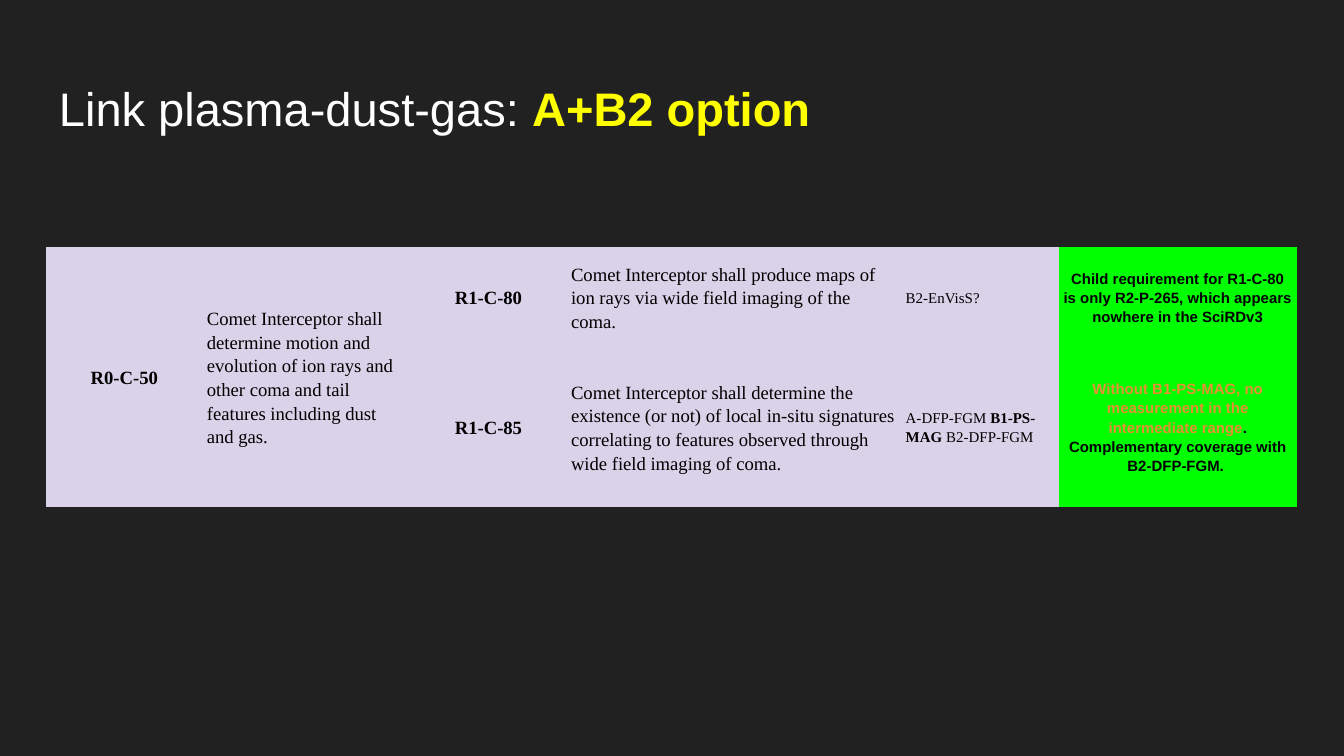
"""Build the slide on the plasma-dust-gas link for the A+B2 option."""
from pptx import Presentation
from pptx.dml.color import RGBColor
from pptx.enum.text import MSO_ANCHOR, PP_ALIGN
from pptx.util import Inches, Pt

MIDDLE, LEFT, CENTER = MSO_ANCHOR.MIDDLE, PP_ALIGN.LEFT, PP_ALIGN.CENTER
NO_GRID_STYLE = "{2D5ABB26-0587-4C30-8999-92F81FD0307C}"

THEME = {
    "background": "212121", "title": "FFFFFF", "highlight": "FFFF00",
    "text": "000000", "warning": "E69138", "lilac": "D9D2E9", "green": "00FF00",
    "sans": "Arial", "serif": "Times New Roman",
    "title_size": 25.2, "body_size": 10, "small_size": 8,
}

TITLE = [("Link plasma-dust-gas: ", "title", False), ("A+B2 option", "highlight", True)]

REQUIREMENTS = [
    [
        [("R0-C-50", "text", True)],
        [("Comet Interceptor shall determine motion and evolution of ion rays and "
          "other coma and tail features including dust and gas.", "text", False)],
        [("R1-C-80", "text", True)],
        [("Comet Interceptor shall produce maps of ion rays via wide field imaging "
          "of the coma.", "text", False)],
        [("B2-EnVisS?", "text", False)],
        [("Child requirement for R1-C-80 is only R2-P-265, which appears nowhere "
          "in the SciRDv3", "text", True)],
    ],
    [
        [],
        [],
        [("R1-C-85", "text", True)],
        [("Comet Interceptor shall determine the existence (or not) of local in-situ "
          "signatures correlating to features observed through wide field imaging "
          "of coma.", "text", False)],
        [("A-DFP-FGM", "text", False), (" B1-PS-MAG ", "text", True),
         ("B2-DFP-FGM", "text", False)],
        [("Without B1-PS-MAG, no measurement in the intermediate range", "warning", True),
         (". Complementary coverage with B2-DFP-FGM. ", "text", True)],
    ],
]

IDENTIFIER = (CENTER, "serif", "body_size", "lilac")
STATEMENT = (LEFT, "serif", "body_size", "lilac")
INSTRUMENTS = (LEFT, "serif", "small_size", "lilac")
COMMENT = (CENTER, "sans", "small_size", "green")
COLUMNS = [
    (1.17, IDENTIFIER), (1.54, STATEMENT), (1.17, IDENTIFIER),
    (2.49, STATEMENT), (1.17, INSTRUMENTS), (1.77, COMMENT),
]
ROW_HEIGHTS = [0.74, 1.09]
WIDTH, MARGIN = 10, 0.34
HEIGHT = WIDTH * 9 / 16
TITLE_TOP, TITLE_HEIGHT, TABLE_TOP = 0.49, 0.63, 1.84


def color(key):
    return RGBColor.from_string(THEME[key])


def write(paragraph, phrases, font, size, align):
    paragraph.alignment = align
    paragraph.font.name = THEME[font]
    paragraph.font.size = Pt(THEME[size])
    for words, tint, bold in phrases:
        run = paragraph.add_run()
        run.text = words
        run.font.bold = bold
        run.font.color.rgb = color(tint)


def add_title(slide):
    heading = slide.shapes.add_textbox(
        Inches(MARGIN), Inches(TITLE_TOP), Inches(WIDTH - 2 * MARGIN), Inches(TITLE_HEIGHT)
    ).text_frame
    heading.word_wrap = True
    heading.vertical_anchor = MIDDLE
    heading.margin_left = heading.margin_right = Inches(0.1)
    heading.margin_top = heading.margin_bottom = Inches(0.1)
    write(heading.paragraphs[0], TITLE, "sans", "title_size", LEFT)


def add_requirements(slide):
    frame = slide.shapes.add_table(
        len(ROW_HEIGHTS), len(COLUMNS), Inches(MARGIN), Inches(TABLE_TOP),
        Inches(sum(width for width, _ in COLUMNS)), Inches(sum(ROW_HEIGHTS)),
    )
    table = frame.table
    table.first_row = table.horz_banding = False
    table._tbl.tblPr.find("{*}tableStyleId").text = NO_GRID_STYLE
    for row, height in zip(table.rows, ROW_HEIGHTS):
        row.height = Inches(height)
    for c, (width, (align, font, size, fill)) in enumerate(COLUMNS):
        table.columns[c].width = Inches(width)
        for r, requirement in enumerate(REQUIREMENTS):
            cell = table.cell(r, c)
            cell.fill.solid()
            cell.fill.fore_color.rgb = color(fill)
            cell.vertical_anchor = MIDDLE
            cell.margin_left = cell.margin_right = Inches(0.03)
            cell.margin_top = cell.margin_bottom = Inches(0.02)
            paragraph = cell.text_frame.paragraphs[0]
            paragraph.line_spacing = 1.15
            write(paragraph, requirement[c], font, size, align)
            if not requirement[c]:
                table.cell(r - 1, c).merge(cell)


def main():
    deck = Presentation()
    deck.slide_width, deck.slide_height = Inches(WIDTH), Inches(HEIGHT)
    slide = deck.slides.add_slide(deck.slide_layouts[6])
    slide.background.fill.solid()
    slide.background.fill.fore_color.rgb = color("background")
    add_title(slide)
    add_requirements(slide)
    deck.save("out.pptx")


if __name__ == "__main__":
    main()
